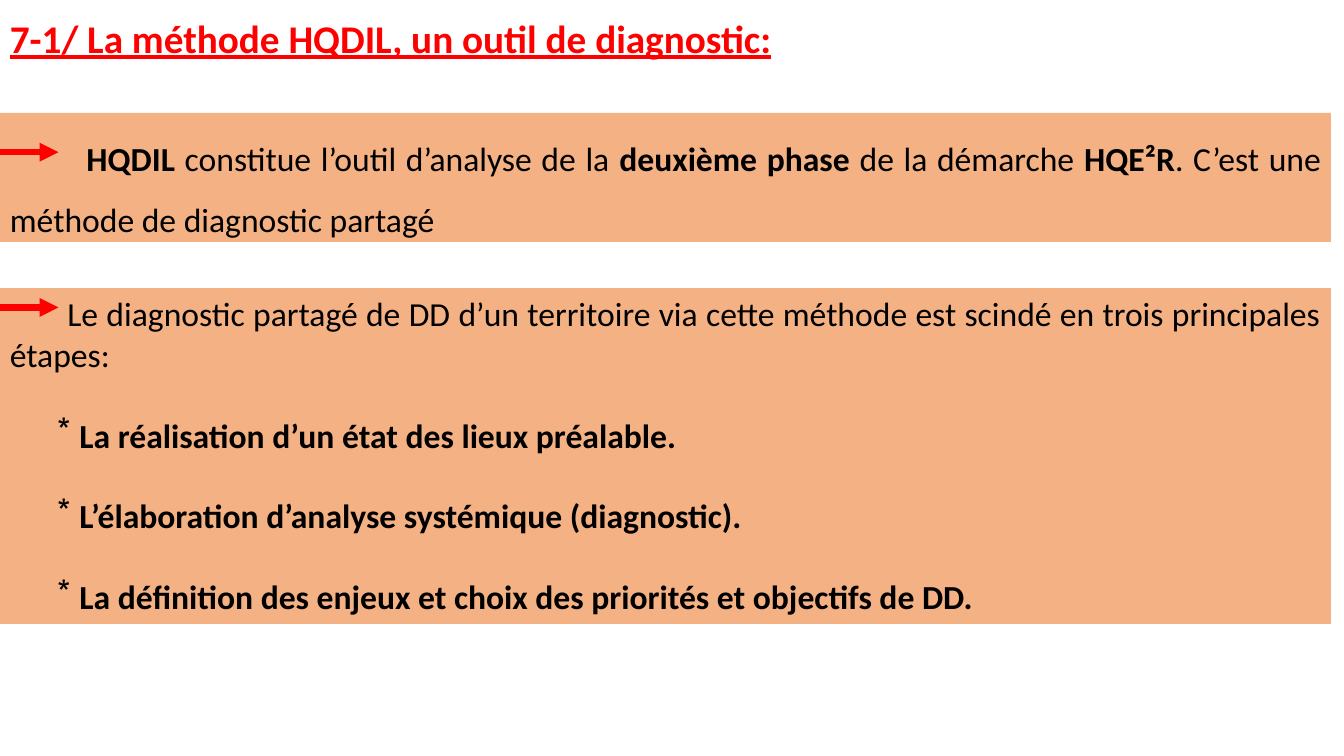
import pptx
import pptx.dml.color
import pptx.enum.shapes
import pptx.enum.text
import pptx.oxml.ns
import pptx.util
from lxml import etree

Inches = pptx.util.Inches
Pt = pptx.util.Pt
ALIGN = pptx.enum.text.PP_ALIGN
ANCHOR = pptx.enum.text.MSO_ANCHOR

RED = pptx.dml.color.RGBColor(0xFF, 0x00, 0x00)
BLACK = pptx.dml.color.RGBColor(0x00, 0x00, 0x00)
PEACH = pptx.dml.color.RGBColor(0xF4, 0xB1, 0x83)
FONT = "Calibri"
WIDTH = 13.2
ARROW_LENGTH = 0.58

DEFINITION = [
    ("HQDIL", True),
    (" constitue l’outil d’analyse de la ", False),
    ("deuxième phase ", True),
    ("de la démarche ", False),
    ("HQE²R", True),
    (". C’est une méthode de diagnostic partagé", False),
]
STEPS_INTRO = ("Le diagnostic partagé de DD d’un territoire via cette méthode "
               "est scindé en trois principales étapes:")
STEPS = [
    "La réalisation d’un état des lieux préalable.",
    "L’élaboration d’analyse systémique (diagnostic).",
    "La définition des enjeux et choix des priorités et objectifs de DD.",
]


def add_run(paragraph, text, size=24, color=BLACK, bold=False):
    run = paragraph.add_run()
    run.text = text
    run.font.name = FONT
    run.font.size = Pt(size)
    run.font.color.rgb = color
    run.font.bold = bold
    return run


def set_indent(paragraph, first_line, left=0):
    properties = paragraph._p.get_or_add_pPr()
    properties.set("marL", str(Inches(left)))
    properties.set("indent", str(Inches(first_line)))


def add_star_bullet(paragraph):
    bullet = etree.SubElement(paragraph._p.get_or_add_pPr(),
                              pptx.oxml.ns.qn("a:buChar"))
    bullet.set("char", "*")


def add_panel(slide, left, top, width, height):
    """Add a peach panel and return its text frame."""
    panel = slide.shapes.add_shape(
        pptx.enum.shapes.MSO_SHAPE.RECTANGLE,
        Inches(left), Inches(top), Inches(width), Inches(height))
    panel.shadow.inherit = False
    panel.fill.solid()
    panel.fill.fore_color.rgb = PEACH
    panel.line.fill.background()
    frame = panel.text_frame
    frame.word_wrap = True
    frame.vertical_anchor = ANCHOR.TOP
    frame.paragraphs[0].alignment = ALIGN.JUSTIFY
    return frame


def add_arrow(slide, left, y):
    arrow = slide.shapes.add_connector(
        pptx.enum.shapes.MSO_CONNECTOR.STRAIGHT,
        Inches(left), Inches(y), Inches(left + ARROW_LENGTH), Inches(y))
    arrow.line.color.rgb = RED
    arrow.line.width = Pt(4.5)
    head = etree.SubElement(arrow.line._get_or_add_ln(),
                            pptx.oxml.ns.qn("a:tailEnd"))
    head.set("type", "triangle")
    etree.SubElement(arrow._element.spPr, pptx.oxml.ns.qn("a:effectLst"))


def add_title(slide, left, top, width, height):
    title = slide.shapes.add_textbox(
        Inches(left), Inches(top), Inches(width), Inches(height))
    frame = title.text_frame
    frame.word_wrap = True
    frame.vertical_anchor = ANCHOR.BOTTOM
    heading = frame.paragraphs[0]
    heading.line_spacing = 0.9
    run = add_run(heading, "7-1/ La méthode HQDIL, un outil de diagnostic:",
                  size=28, color=RED, bold=True)
    run.font.underline = True


def add_definition(slide, left, top, width, height):
    definition = add_panel(slide, left, top, width, height).paragraphs[0]
    definition.line_spacing = 1.5
    definition.space_before = Pt(10)
    set_indent(definition, first_line=0.76)
    for text, bold in DEFINITION:
        add_run(definition, text, bold=bold)
    add_arrow(slide, left, top + 0.39)


def add_steps(slide, left, top, width, height):
    frame = add_panel(slide, left, top, width, height)
    intro = frame.paragraphs[0]
    set_indent(intro, first_line=0.57)
    add_run(intro, STEPS_INTRO)
    for text in STEPS:
        step = frame.add_paragraph()
        step.alignment = ALIGN.JUSTIFY
        step.space_before = Pt(29)
        set_indent(step, first_line=-0.22, left=0.69)
        add_star_bullet(step)
        add_run(step, text, bold=True)
    add_arrow(slide, left, top + 0.19)


def main():
    presentation = pptx.Presentation()
    presentation.slide_width = Inches(13.33)
    presentation.slide_height = Inches(7.5)
    slide = presentation.slides.add_slide(presentation.slide_layouts[6])
    add_title(slide, 0, 0.1, WIDTH, 0.56)
    add_definition(slide, 0, 1.12, WIDTH, 1.28)
    add_steps(slide, 0, 2.86, WIDTH, 3.33)
    presentation.save("out.pptx")


if __name__ == "__main__":
    main()
